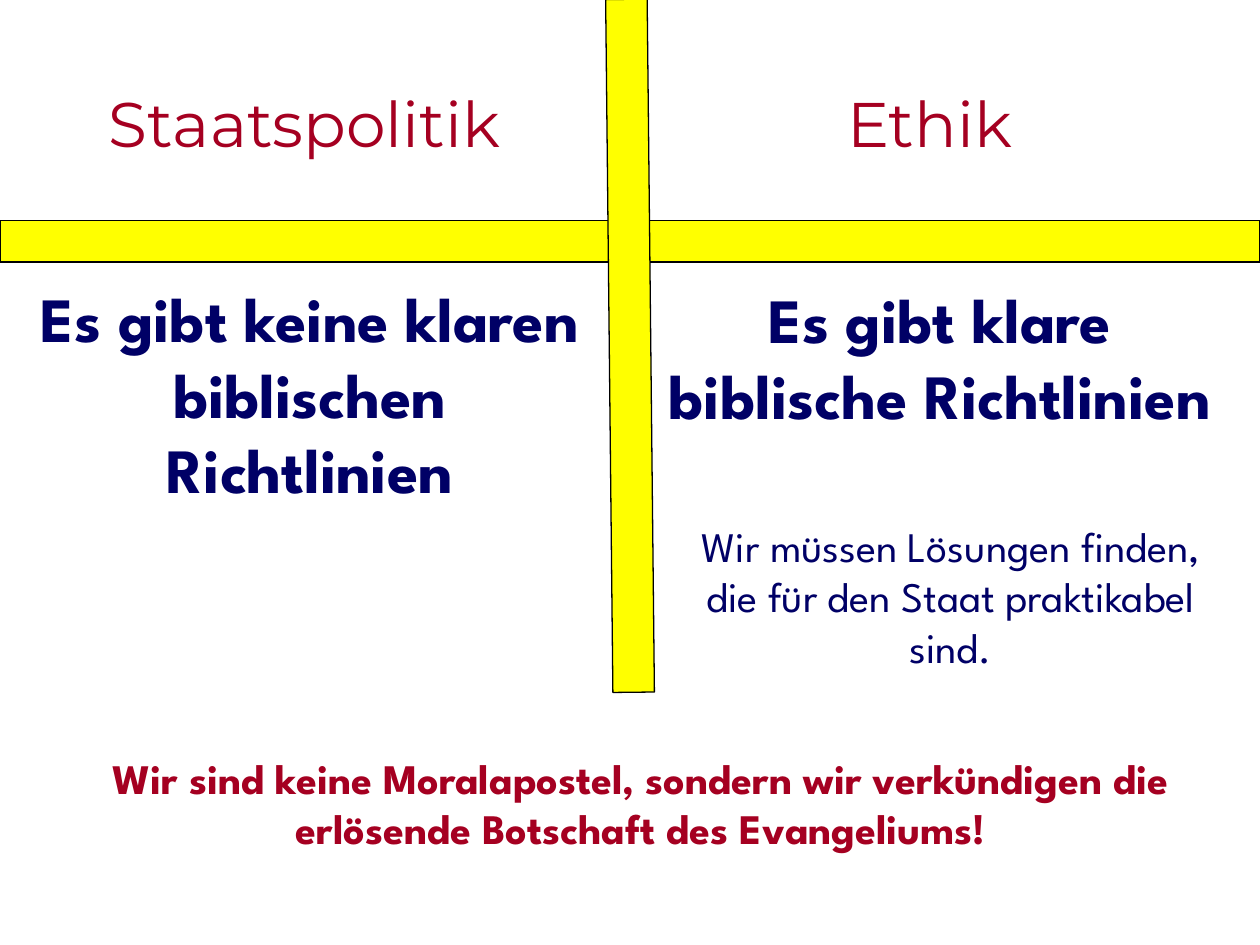
"""Build a slide contrasting state politics and ethics around a yellow cross."""
from pptx import Presentation
from pptx.dml.color import RGBColor
from pptx.enum.shapes import MSO_SHAPE
from pptx.enum.text import MSO_AUTO_SIZE, PP_ALIGN
from pptx.util import Inches, Pt

YELLOW = RGBColor(0xFF, 0xFF, 0x00)
BLACK = RGBColor(0x00, 0x00, 0x00)
CRIMSON = RGBColor(0xA5, 0x00, 0x21)
NAVY = RGBColor(0x00, 0x00, 0x66)
HEADING_FONT = "Montserrat"
BODY_FONT = "League Spartan"

deck = Presentation()
deck.slide_width = Inches(10)
deck.slide_height = Inches(7.5)
slide = deck.slides.add_slide(deck.slide_layouts[6])


def add_text(text, left, top, width, height, size, color, font=BODY_FONT, bold=False, wrap=True):
    box = slide.shapes.add_textbox(Inches(left), Inches(top), Inches(width), Inches(height))
    frame = box.text_frame
    frame.word_wrap = wrap
    frame.auto_size = MSO_AUTO_SIZE.SHAPE_TO_FIT_TEXT if wrap else MSO_AUTO_SIZE.NONE
    paragraph = frame.paragraphs[0]
    paragraph.text = text
    paragraph.alignment = PP_ALIGN.CENTER
    paragraph.font.name = font
    paragraph.font.size = Pt(size)
    paragraph.font.bold = bold
    paragraph.font.color.rgb = color


for left, top, length, angle in [(0, 1.75, 10, 0), (2.25, 2.58, 5.5, 89.4)]:
    beam = slide.shapes.add_shape(
        MSO_SHAPE.RECTANGLE, Inches(left), Inches(top), Inches(length), Inches(0.33)
    )
    beam.rotation = angle
    beam.shadow.inherit = False
    beam.fill.solid()
    beam.fill.fore_color.rgb = YELLOW
    beam.line.color.rgb = BLACK
    beam.line.width = Pt(0.75)

for heading, left, width in [("Ethik", 6.67, 1.42), ("Staatspolitik", 0.67, 3.49)]:
    add_text(heading, left, 0.62, width, 0.71, 36, CRIMSON, font=HEADING_FONT, wrap=False)

for claim, left, top in [
    ("Es gibt keine klaren biblischen Richtlinien", 0.17, 2.17),
    ("Es gibt klare biblische Richtlinien", 5.17, 2.18),
]:
    add_text(claim, left, top, 4.58, 1.9, 36, NAVY, bold=True)

add_text(
    "Wir müssen Lösungen finden, die für den Staat praktikabel sind.",
    5.42, 4.08, 4.25, 1.3, 24, NAVY,
)
add_text(
    "Wir sind keine Moralapostel, sondern wir verkündigen die erlösende Botschaft des Evangeliums!",
    0.5, 5.92, 9.17, 0.9, 24, CRIMSON, bold=True,
)

deck.save("out.pptx")
